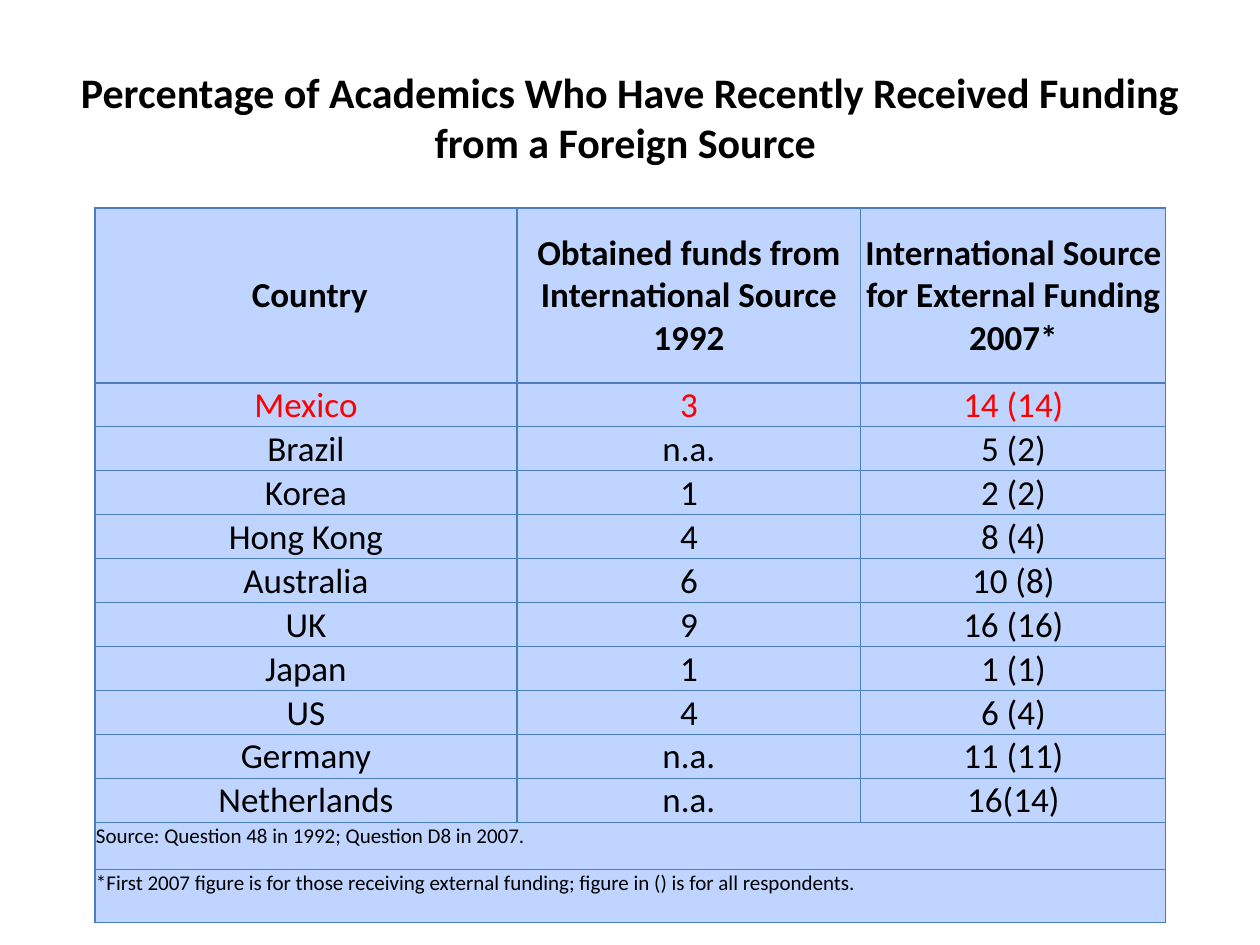
from typing import NamedTuple

from lxml.etree import SubElement
from pptx import Presentation
from pptx.dml.color import RGBColor
from pptx.enum.text import MSO_ANCHOR, PP_ALIGN
from pptx.oxml.ns import qn
from pptx.util import Emu, Pt

EMU_PER_PX = 914400 / 126
FONT = "Calibri"
BLACK, RED = "000000", "FF0000"
CELL_FILL, BORDER = "BFD5FF", "4B7EBC"


class TableRow(NamedTuple):
    texts: tuple[str, ...]
    height: int = 44
    size: int = 20
    color: str = BLACK
    bold: bool = False


COLUMN_WIDTHS = (422, 344, 305)
ROWS = (
    TableRow((" Country", "Obtained funds from International Source 1992",
              "International Source for External Funding 2007*"), height=175, bold=True),
    TableRow(("Mexico", "3", "14 (14)"), color=RED),
    TableRow(("Brazil", "n.a.", "5 (2)")),
    TableRow(("Korea", "1", "2 (2)")),
    TableRow(("Hong Kong", "4", "8 (4)")),
    TableRow(("Australia", "6", "10 (8)")),
    TableRow(("UK", "9", "16 (16)")),
    TableRow(("Japan", "1", "1 (1)")),
    TableRow(("US", "4", "6 (4)")),
    TableRow(("Germany", "n.a.", "11 (11)")),
    TableRow(("Netherlands", "n.a.", "16(14)")),
    # A row with a single text spans all columns
    TableRow(("Source: Question 48 in 1992; Question D8 in 2007.",), height=47, size=12),
    TableRow(("*First 2007 figure is for those receiving external funding; "
              "figure in () is for all respondents.",), height=53, size=12),
)


def px(length: int) -> Emu:
    return Emu(round(length * EMU_PER_PX))


def rgb(color: str) -> RGBColor:
    return RGBColor.from_string(color)


def write_text(text_frame, text: str, *, size: int, color: str = BLACK,
               bold: bool = False, align=PP_ALIGN.CENTER) -> None:
    paragraph = text_frame.paragraphs[0]
    paragraph.alignment = align
    run = paragraph.add_run()
    run.text = text
    run.font.name = FONT
    run.font.size = Pt(size)
    run.font.bold = bold
    run.font.color.rgb = rgb(color)


def style_cell(cell) -> None:
    cell.margin_left = cell.margin_right = cell.margin_top = px(1)
    cell.margin_bottom = 0
    properties = cell._tc.get_or_add_tcPr()
    for side in ("lnL", "lnR", "lnT", "lnB"):
        line = SubElement(properties, qn(f"a:{side}"), w=str(Pt(0.75)))
        fill = SubElement(line, qn("a:solidFill"))
        SubElement(fill, qn("a:srgbClr"), val=BORDER)
    cell.fill.solid()
    cell.fill.fore_color.rgb = rgb(CELL_FILL)


def add_title(slide, text: str) -> None:
    title = slide.shapes.title
    title.left, title.top, title.width, title.height = px(63), px(38), px(1134), px(158)
    title.text_frame.vertical_anchor = MSO_ANCHOR.MIDDLE
    write_text(title.text_frame, text, size=24, bold=True)


def fill_row(table, row_index: int, row: TableRow) -> None:
    table.rows[row_index].height = px(row.height)
    cells = table.rows[row_index].cells
    for cell in cells:
        style_cell(cell)
    is_note = len(row.texts) == 1
    if is_note:
        table.cell(row_index, 0).merge(table.cell(row_index, len(COLUMN_WIDTHS) - 1))
    for cell, text in zip(cells, row.texts):
        cell.vertical_anchor = MSO_ANCHOR.TOP if is_note else MSO_ANCHOR.MIDDLE
        write_text(cell.text_frame, text, size=row.size, color=row.color, bold=row.bold,
                   align=PP_ALIGN.LEFT if is_note else PP_ALIGN.CENTER)


def add_funding_table(slide) -> None:
    frame = slide.shapes.add_table(
        len(ROWS), len(COLUMN_WIDTHS), px(95), px(208),
        px(sum(COLUMN_WIDTHS)), px(sum(row.height for row in ROWS)))
    table = frame.table
    table.first_row = table.horz_banding = False
    for column, width in zip(table.columns, COLUMN_WIDTHS):
        column.width = px(width)
    for row_index, row in enumerate(ROWS):
        fill_row(table, row_index, row)


def main() -> None:
    presentation = Presentation()
    presentation.slide_width, presentation.slide_height = px(1260), px(945)
    slide = presentation.slides.add_slide(presentation.slide_layouts[5])
    add_title(slide, "Percentage of Academics Who Have Recently Received Funding "
                     "from a Foreign Source ")
    add_funding_table(slide)
    presentation.save("out.pptx")


if __name__ == "__main__":
    main()
